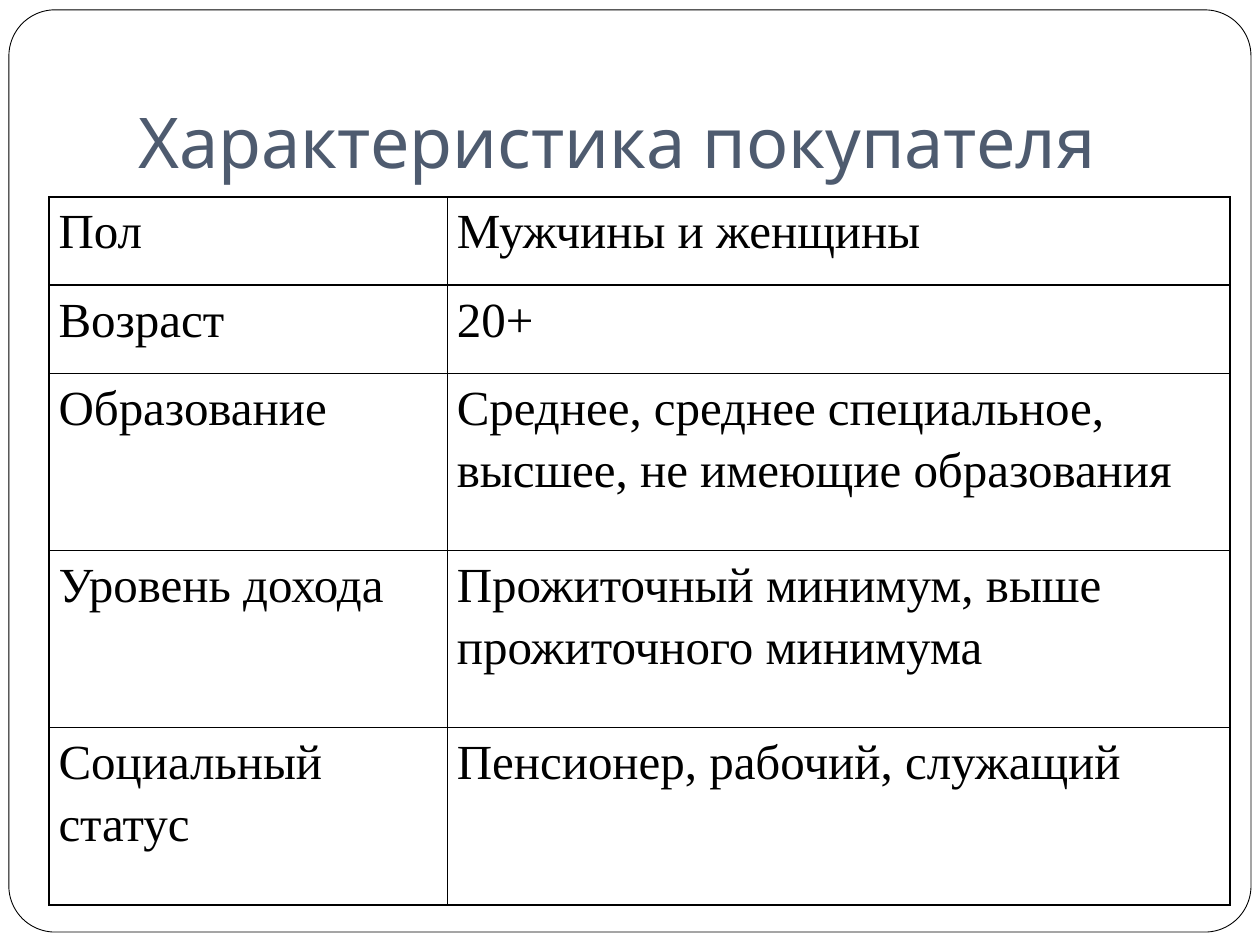
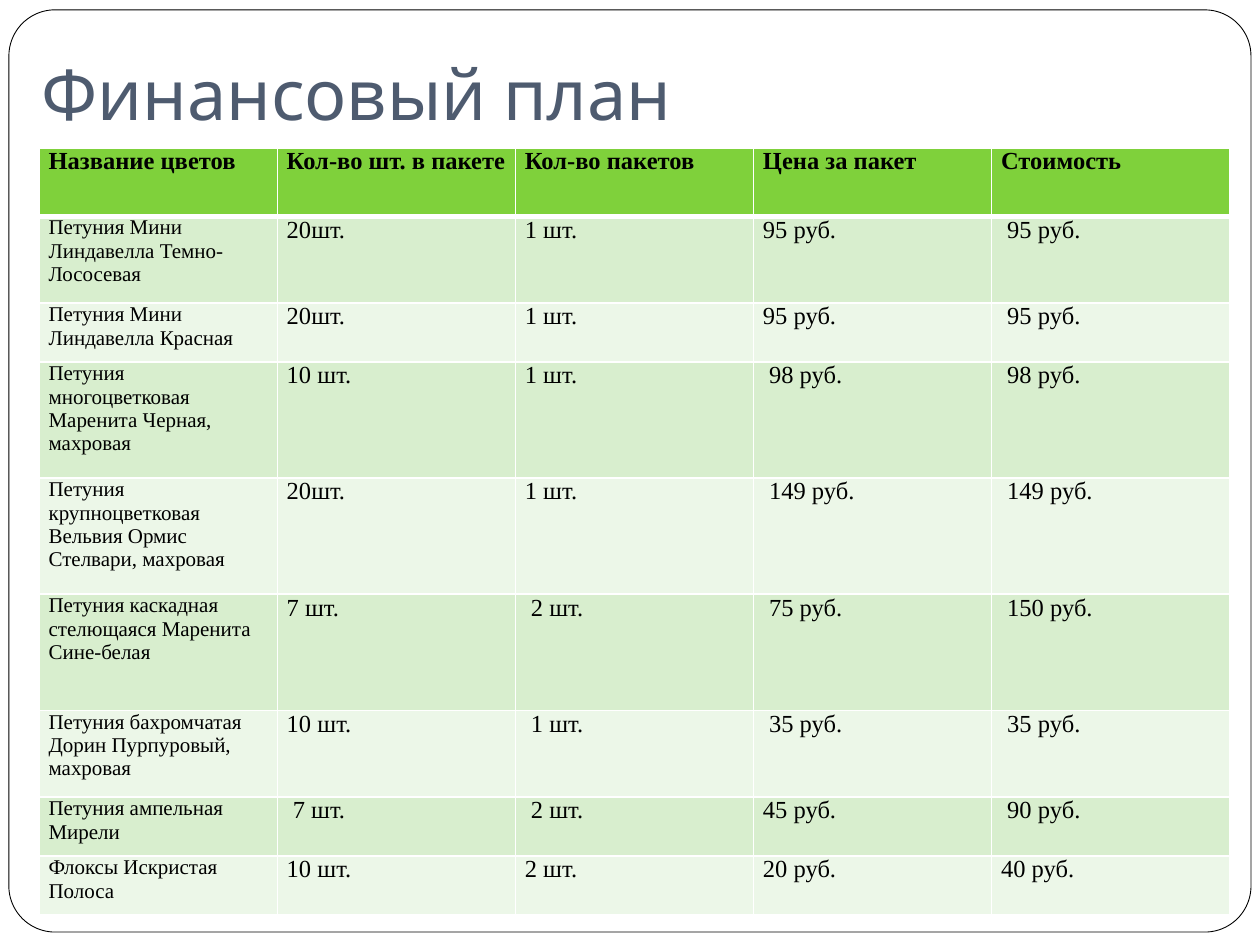
import pptx
import pptx.util
import pptx.dml.color
import pptx.enum.shapes
import pptx.enum.text
import pptx.oxml
import pptx.oxml.ns
from dataclasses import dataclass

Cm, Pt = pptx.util.Cm, pptx.util.Pt
RGB = pptx.dml.color.RGBColor.from_string


@dataclass(frozen=True)
class Theme:
    """Colours, fonts and type sizes of the deck."""
    paper: str = "FFFFFF"
    ink: str = "000000"
    title: str = "4E5B6F"
    header: str = "7FD13B"
    bands: tuple = ("D8EECE", "ECF7E8")
    title_font: str = "Karla"
    table_font: str = "Times New Roman"
    title_size: int = 40
    profile_size: int = 28
    plan_size: int = 14
    name_size: int = 12


THEME = Theme()
TITLE_FRAME = {
    "margin_left": Cm(0.25), "margin_top": Cm(0.13),
    "margin_right": Cm(0.25), "margin_bottom": Cm(0.25),
    "word_wrap": True,
    "auto_size": pptx.enum.text.MSO_AUTO_SIZE.NONE,
    "vertical_anchor": pptx.enum.text.MSO_ANCHOR.BOTTOM,
}
CELL_FRAME = {
    "margin_left": Cm(0.19), "margin_top": 0,
    "margin_right": Cm(0.19), "margin_bottom": 0,
    "vertical_anchor": pptx.enum.text.MSO_ANCHOR.TOP,
}

# Slide content
PROFILE = [
    ("Пол", "Мужчины и женщины"),
    ("Возраст", "20+"),
    ("Образование", "Среднее, среднее специальное, высшее, не имеющие образования"),
    ("Уровень дохода", "Прожиточный минимум, выше прожиточного минимума"),
    ("Социальный статус", "Пенсионер, рабочий, служащий"),
]
PLAN = [
    ("Название цветов", "Кол-во шт. в пакете", "Кол-во пакетов",
     "Цена за пакет", "Стоимость"),
    ("Петуния Мини Линдавелла Темно-Лососевая", "20шт.", "1 шт.",
     "95 руб.", " 95 руб."),
    ("Петуния Мини Линдавелла Красная", "20шт.", "1 шт.", "95 руб.", " 95 руб."),
    ("Петуния многоцветковая Маренита Черная, махровая", "10 шт.", "1 шт.",
     " 98 руб.", " 98 руб."),
    ("Петуния крупноцветковая Вельвия Ормис Стелвари, махровая", "20шт.", "1 шт.",
     " 149 руб.", " 149 руб."),
    ("Петуния каскадная стелющаяся Маренита Сине-белая", "7 шт.", " 2 шт.",
     " 75 руб.", " 150 руб."),
    ("Петуния бахромчатая Дорин Пурпуровый, махровая", "10 шт.", " 1 шт.",
     " 35 руб.", " 35 руб."),
    ("Петуния ампельная Мирели", " 7 шт.", " 2 шт.", "45 руб.", " 90 руб."),
    ("Флоксы Искристая Полоса", "10 шт.", "2 шт.", "20 руб.", "40 руб."),
]


def apply(obj, values):
    for name, value in values.items():
        setattr(obj, name, value)


def write(p, text, font, size, color, bold=False):
    r = p.add_run()
    r.text = text
    apply(r.font, {"name": font, "size": Pt(size), "bold": bold})
    r.font.color.rgb = RGB(color)


def add_frame(slide, layout):
    """Draw the rounded page frame and move it to the shared layout."""
    sp = slide.shapes.add_shape(pptx.enum.shapes.MSO_SHAPE.ROUNDED_RECTANGLE,
                                Cm(0.18), Cm(0.2), Cm(25.04), Cm(18.59))
    sp.adjustments[0] = 0.05
    sp.shadow.inherit = False
    sp.fill.solid()
    sp.fill.fore_color.rgb = RGB(THEME.paper)
    sp.line.color.rgb = RGB(THEME.ink)
    sp.line.width = Pt(0.5)
    layout.shapes.element.insert(2, sp.element)


def set_title(slide, text, left, top, width, height):
    sp = slide.shapes.title
    apply(sp, {"left": Cm(left), "top": Cm(top),
               "width": Cm(width), "height": Cm(height)})
    apply(sp.text_frame, TITLE_FRAME)
    p = sp.text_frame.paragraphs[0]
    p.alignment = pptx.enum.text.PP_ALIGN.LEFT
    write(p, text, THEME.title_font, THEME.title_size, THEME.title)


def set_borders(cell, color, top=1, bottom=1):
    tcPr = cell._tc.get_or_add_tcPr()
    for side, width in (("L", 1), ("R", 1), ("T", top), ("B", bottom)):
        tcPr.append(pptx.oxml.parse_xml(
            f'<a:ln{side} {pptx.oxml.ns.nsdecls("a")} w="{Pt(width)}">'
            f'<a:solidFill><a:srgbClr val="{color}"/></a:solidFill></a:ln{side}>'))


def add_grid(slide, left, top, cols, rows):
    """Add an unstyled table with the given column widths and row heights."""
    table = slide.shapes.add_table(len(rows), len(cols), Cm(left), Cm(top),
                                   Cm(sum(cols)), Cm(sum(rows))).table
    apply(table, {"first_row": False, "horz_banding": False})
    for column, width in zip(table.columns, cols):
        column.width = Cm(width)
    for row, height in zip(table.rows, rows):
        row.height = Cm(height)
    return table


def fill_cell(cell, text, size, fill=None, bold=False, spacing=1.0):
    apply(cell, CELL_FRAME)
    if fill:
        cell.fill.solid()
        cell.fill.fore_color.rgb = RGB(fill)
    else:
        cell.fill.background()
    p = cell.text_frame.paragraphs[0]
    p.line_spacing = spacing
    write(p, text, THEME.table_font, size, THEME.ink, bold)


def add_profile_table(slide):
    table = add_grid(slide, 0.99, 3.97, [8.03, 15.78], [1.78] * 2 + [3.57] * 3)
    for i, row in enumerate(PROFILE):
        for j, text in enumerate(row):
            cell = table.cell(i, j)
            set_borders(cell, THEME.ink)
            fill_cell(cell, text, THEME.profile_size, spacing=1.15)


def add_plan_table(slide):
    rows = [1.38, 1.75, 1.19] + [2.34] * 3 + [1.75] + [1.19] * 2
    table = add_grid(slide, 0.79, 2.98, [4.8] * 5, rows)
    for i, row in enumerate(PLAN):
        header = i == 0
        fill = THEME.header if header else THEME.bands[(i - 1) % 2]
        for j, text in enumerate(row):
            cell = table.cell(i, j)
            # A thick rule separates the header from the first data row
            set_borders(cell, THEME.paper, top=3 if i == 1 else 1,
                        bottom=3 if header else 1)
            size = THEME.name_size if j == 0 and not header else THEME.plan_size
            fill_cell(cell, text, size, fill, bold=header)


def main():
    prs = pptx.Presentation()
    prs.slide_width, prs.slide_height = Cm(25.4), Cm(19.05)
    layout = prs.slide_layouts.get_by_name("Title Only")

    # Customer profile
    slide = prs.slides.add_slide(layout)
    add_frame(slide, layout)
    set_title(slide, "Характеристика покупателя", 2.54, 0.76, 21.59, 3.17)
    add_profile_table(slide)

    # Financial plan
    slide = prs.slides.add_slide(layout)
    set_title(slide, "Финансовый план", 0.59, 0.76, 24.41, 2.21)
    add_plan_table(slide)

    prs.save("out.pptx")


if __name__ == "__main__":
    main()
